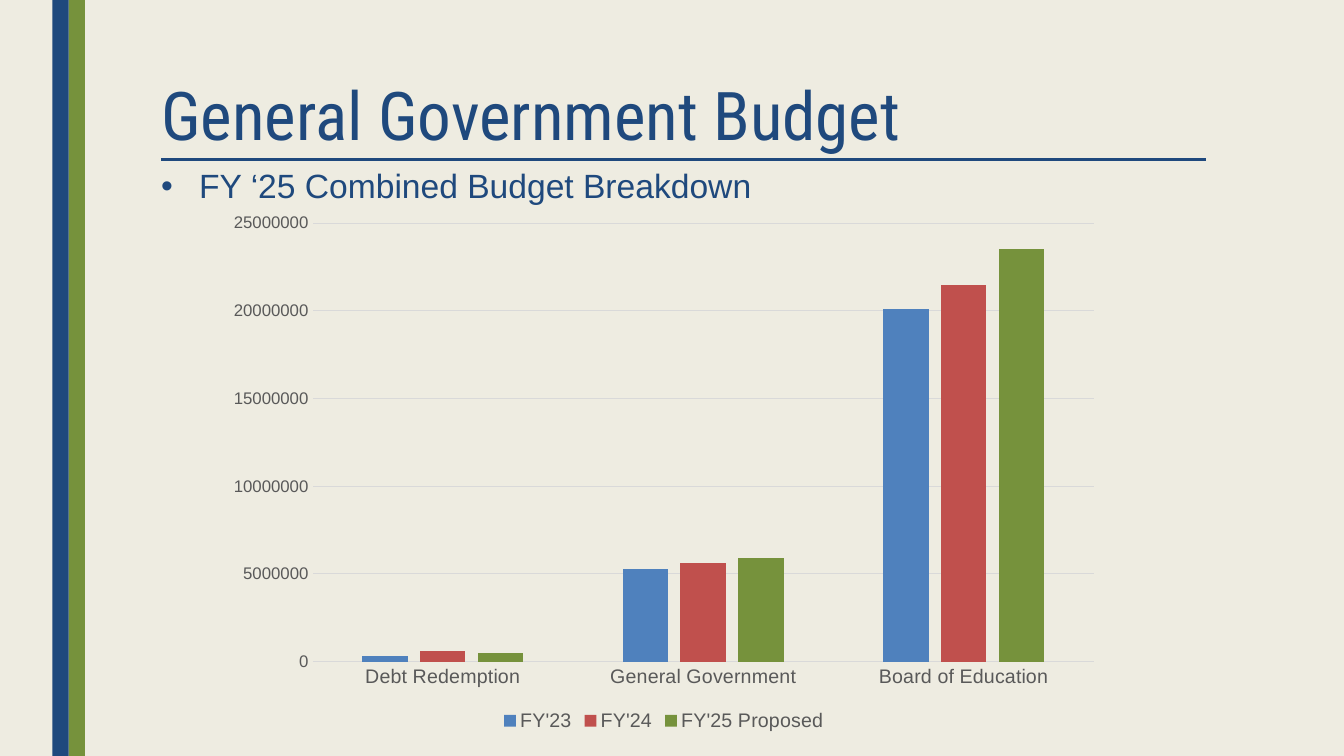
import pptx
import pptx.chart.data
import pptx.dml.color
import pptx.enum.chart
import pptx.enum.shapes
import pptx.enum.text
import pptx.oxml.xmlchemy
import pptx.util

Cm = pptx.util.Cm
RGBColor = pptx.dml.color.RGBColor
CREAM = RGBColor(0xEE, 0xEC, 0xE1)
NAVY = RGBColor(0x1F, 0x49, 0x7D)
BLUE = RGBColor(0x4F, 0x81, 0xBD)
RED = RGBColor(0xC0, 0x50, 0x4D)
GREEN = RGBColor(0x76, 0x92, 0x3C)
BLACK = RGBColor(0, 0, 0)
DARK_GRAY = RGBColor(0x59, 0x59, 0x59)
LIGHT_GRAY = RGBColor(0xD9, 0xD9, 0xD9)

CATEGORIES = ["Debt Redemption", "General Government", "Board of Education"]
BUDGETS = [
    ("FY'23", BLUE, (300000, 5300000, 20100000)),
    ("FY'24", RED, (600000, 5600000, 21500000)),
    ("FY'25 Proposed", GREEN, (500000, 5900000, 23500000)),
]


def style_font(font, name, size, color):
    font.name = name
    font.size = pptx.util.Pt(size)
    font.color.rgb = color


def style_line(line, color, width):
    line.color.rgb = color
    line.width = pptx.util.Pt(width)


def add_stripe(page, left, color):
    stripe = page.shapes.add_shape(
        pptx.enum.shapes.MSO_SHAPE.RECTANGLE, left, 0, Cm(0.41), Cm(19.05))
    stripe.shadow.inherit = False
    stripe.fill.solid()
    stripe.fill.fore_color.rgb = color
    stripe.line.fill.background()


def add_rule(page, left, right, top):
    rule = page.shapes.add_connector(
        pptx.enum.shapes.MSO_CONNECTOR.STRAIGHT, left, top, right, top)
    style_line(rule.line, NAVY, 2.25)
    properties = rule._element.spPr
    properties.append(pptx.oxml.xmlchemy.OxmlElement("a:effectLst"))


def add_text(page, text, top, height, font_name, size, line_spacing):
    box = page.shapes.add_textbox(Cm(3.81), top, Cm(26.67), height)
    box.text_frame.word_wrap = True
    box.text_frame.text = text
    para = box.text_frame.paragraphs[0]
    para.line_spacing = line_spacing
    style_font(para.runs[0].font, font_name, size, NAVY)
    return box


def add_bullet(para, indent):
    properties = para._p.get_or_add_pPr()
    properties.set("marL", str(indent))
    properties.set("indent", str(-indent))
    font = pptx.oxml.xmlchemy.OxmlElement("a:buFont")
    font.set("typeface", "Arial")
    bullet = pptx.oxml.xmlchemy.OxmlElement("a:buChar")
    bullet.set("char", "•")
    properties.extend([font, bullet])


def style_axes(chart):
    no_tick = pptx.enum.chart.XL_TICK_MARK.NONE
    for axis, size in ((chart.category_axis, 14), (chart.value_axis, 12)):
        axis.major_tick_mark = no_tick
        axis.minor_tick_mark = no_tick
        style_font(axis.tick_labels.font, "Arial", size, DARK_GRAY)
    style_line(chart.category_axis.format.line, LIGHT_GRAY, 0.75)

    amounts = chart.value_axis
    amounts.minimum_scale = 0
    amounts.maximum_scale = 25000000
    amounts.major_unit = 5000000
    amounts.format.line.fill.background()
    style_line(amounts.major_gridlines.format.line, LIGHT_GRAY, 0.75)


def add_budget_chart(page):
    data = pptx.chart.data.CategoryChartData()
    data.categories = CATEGORIES
    for name, _, values in BUDGETS:
        data.add_series(name, values)
    chart = page.shapes.add_chart(
        pptx.enum.chart.XL_CHART_TYPE.COLUMN_CLUSTERED,
        Cm(5.44), Cm(5.13), Cm(22.58), Cm(13.41), data).chart
    chart.has_title = False
    style_font(chart.font, "Arial", 10, BLACK)
    style_axes(chart)

    plot = chart.plots[0]
    plot.gap_width = 219
    plot.overlap = -27
    plot.vary_by_categories = False
    for series, (_, color, _) in zip(plot.series, BUDGETS):
        series.format.fill.solid()
        series.format.fill.fore_color.rgb = color

    chart.has_legend = True
    chart.legend.position = pptx.enum.chart.XL_LEGEND_POSITION.BOTTOM
    chart.legend.include_in_layout = False
    style_font(chart.legend.font, "Arial", 14, DARK_GRAY)


def main():
    deck = pptx.Presentation()
    deck.slide_width = Cm(33.87)
    deck.slide_height = Cm(19.05)
    page = deck.slides.add_slide(deck.slide_layouts[6])
    page.background.fill.solid()
    page.background.fill.fore_color.rgb = CREAM

    add_stripe(page, Cm(1.73), GREEN)
    add_stripe(page, Cm(1.32), NAVY)
    add_rule(page, Cm(4.06), Cm(30.38), Cm(4.01))

    title = add_text(page, "General Government Budget",
                     Cm(1.9), Cm(2.01), "Roboto Condensed", 48, 0.89)
    title.text_frame.vertical_anchor = pptx.enum.text.MSO_ANCHOR.BOTTOM
    title.text_frame.margin_bottom = 0

    body = add_text(page, "FY ‘25 Combined Budget Breakdown",
                    Cm(4.11), Cm(12.17), "Arial", 24, 0.94)
    para = body.text_frame.paragraphs[0]
    para.space_before = pptx.util.Pt(10)
    para.space_after = pptx.util.Pt(2)
    add_bullet(para, Cm(0.96))

    add_budget_chart(page)
    deck.save("out.pptx")


if __name__ == "__main__":
    main()
